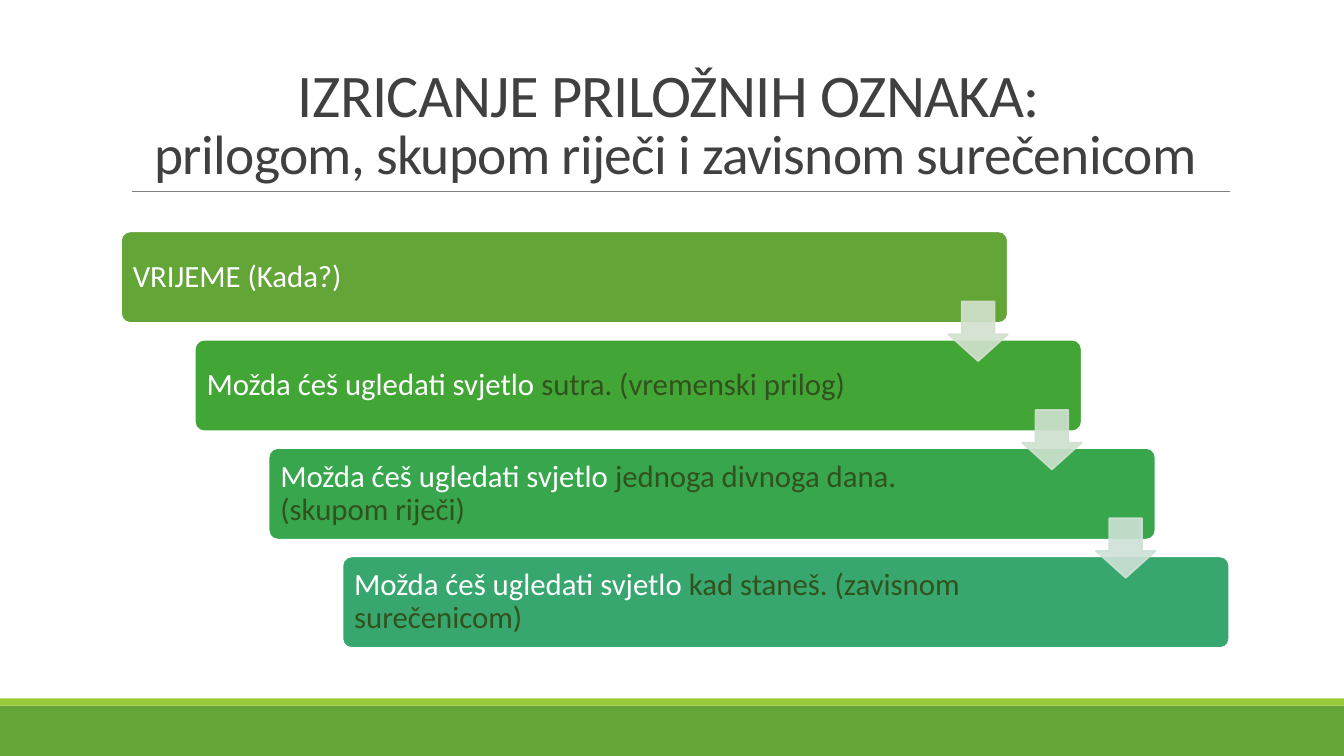
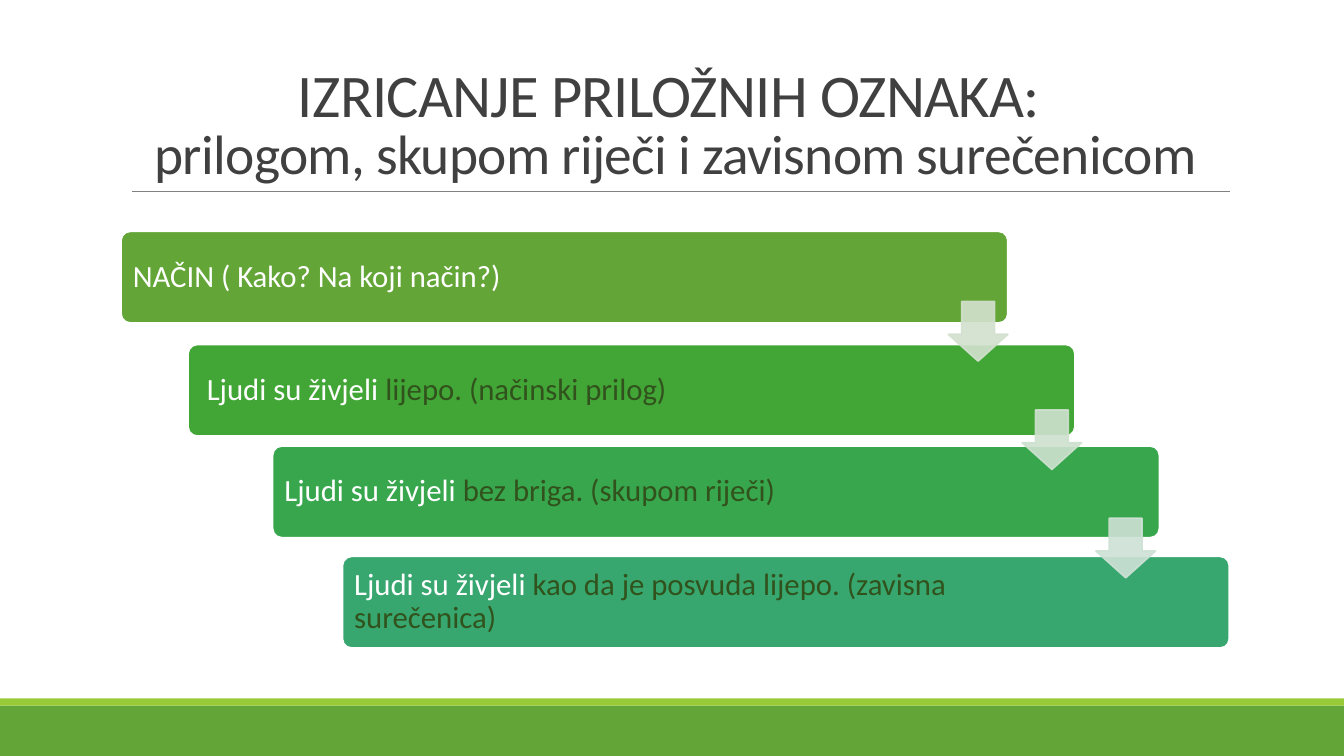
from lxml.etree import SubElement
from pptx import Presentation
from pptx.dml.color import RGBColor
from pptx.enum.shapes import MSO_CONNECTOR, MSO_SHAPE
from pptx.enum.text import MSO_ANCHOR as Anchor, PP_ALIGN as Align
from pptx.oxml.ns import qn
from pptx.util import Cm, Pt

WHITE = RGBColor(0xFF, 0xFF, 0xFF)
GREEN = RGBColor(0x63, 0xA5, 0x37)
LIME = RGBColor(0x99, 0xCB, 0x38)
RULE_GREY = RGBColor(0x80, 0x80, 0x80)
TITLE_GREY = RGBColor(0x40, 0x40, 0x40)
DARK_GREEN = RGBColor(0x31, 0x52, 0x1C)
STEP_COLOURS = [GREEN, RGBColor(0x42, 0xA6, 0x37),
                RGBColor(0x37, 0xA6, 0x4D), RGBColor(0x37, 0xA7, 0x6F)]
ARROW_COLOURS = [RGBColor(0xD3, 0xE1, 0xCE), RGBColor(0xCE, 0xE1, 0xCF),
                 RGBColor(0xCE, 0xE1, 0xD5)]

TITLE = [("IZRICANJE PRILOŽNIH OZNAKA: ", 43.2),
         ("prilogom, skupom riječi i zavisnom surečenicom", 39.6)]

# Each step: plain words, highlighted words, offset from the staircase (cm)
SLIDES = [
    [("VRIJEME (Kada?)", "", (0, 0)),
     ("Možda ćeš ugledati svjetlo ", "sutra. (vremenski prilog)", (0, 0)),
     ("Možda ćeš ugledati svjetlo ",
      "jednoga divnoga dana. (skupom riječi)", (0, 0)),
     ("Možda ćeš ugledati svjetlo ",
      "kad staneš. (zavisnom surečenicom)", (0, 0))],
    [("NAČIN ( Kako? Na koji način?)", "", (0, 0)),
     (" Ljudi su živjeli ", "lijepo. (načinski prilog)", (-0.17, 0.12)),
     ("Ljudi su živjeli ", "bez briga. (skupom riječi)", (0.1, -0.05)),
     ("Ljudi su živjeli ",
      "kao da je posvuda lijepo. (zavisna surečenica)", (0, 0))],
]

FONT = "Calibri"
SLIDE_W, SLIDE_H = 33.87, 19.05
BANDS = [(17.78, 1.27, GREEN), (17.6, 0.18, LIME)]
STEP_LEFT, STEP_TOP, STEP_W, STEP_H = 3.05, 5.83, 22.35, 2.31
SHIFT_X, SHIFT_Y = 1.86, 2.73
ARROW_LEFT, ARROW_TOP, ARROW_SIZE = 23.9, 7.6, 1.5

TITLE_FRAME = dict(word_wrap=True, vertical_anchor=Anchor.BOTTOM)
TITLE_PARAGRAPH = dict(alignment=Align.CENTER, line_spacing=0.85)
STEP_FRAME = dict(word_wrap=True, vertical_anchor=Anchor.MIDDLE,
                  margin_left=Cm(0.23), margin_right=Cm(3.58),
                  margin_top=Cm(0.23), margin_bottom=Cm(0.23))
STEP_PARAGRAPH = dict(alignment=Align.LEFT, line_spacing=0.9)


def set_all(target, values):
    for name, value in values.items():
        setattr(target, name, value)


def add_shape(slide, kind, left, top, width, height, fill, line=None):
    shape = slide.shapes.add_shape(kind, Cm(left), Cm(top), Cm(width), Cm(height))
    shape.shadow.inherit = False
    shape.fill.solid()
    shape.fill.fore_color.rgb = fill
    if line is None:
        shape.line.fill.background()
    else:
        shape.line.color.rgb = line
        shape.line.width = Pt(1.25)
    return shape


def add_run(paragraph, text, size, colour):
    run = paragraph.add_run()
    run.text = text
    set_all(run.font, dict(name=FONT, size=Pt(size)))
    run.font.color.rgb = colour
    return run


def add_frame(slide):
    """Add the bottom bands, the title and the rule under it."""
    for top, height, colour in BANDS:
        add_shape(slide, MSO_SHAPE.RECTANGLE, 0, top, SLIDE_W, height, colour)

    rule = slide.shapes.add_connector(
        MSO_CONNECTOR.STRAIGHT, Cm(3.32), Cm(4.82), Cm(31), Cm(4.82))
    rule.line.color.rgb = RULE_GREY
    rule.line.width = Pt(0.5)
    SubElement(rule.line._get_or_add_ln().getparent(), qn("a:effectLst"))

    title = slide.shapes.add_textbox(Cm(3.05), Cm(0.79), Cm(27.94), Cm(4.03))
    set_all(title.text_frame, TITLE_FRAME)
    paragraph = title.text_frame.paragraphs[0]
    set_all(paragraph, TITLE_PARAGRAPH)
    for number, (text, size) in enumerate(TITLE):
        if number:
            paragraph.add_line_break()
        run = add_run(paragraph, text, size, TITLE_GREY)
        run.font._element.set("spc", "-50")


def add_step(slide, number, plain, highlighted, offset):
    step = add_shape(slide, MSO_SHAPE.ROUNDED_RECTANGLE,
                     STEP_LEFT + number * SHIFT_X + offset[0],
                     STEP_TOP + number * SHIFT_Y + offset[1],
                     STEP_W, STEP_H, STEP_COLOURS[number], WHITE)
    step.adjustments[0] = 0.1
    set_all(step.text_frame, STEP_FRAME)
    paragraph = step.text_frame.paragraphs[0]
    set_all(paragraph, STEP_PARAGRAPH)
    add_run(paragraph, plain, 22, WHITE)
    if highlighted:
        add_run(paragraph, highlighted, 22, DARK_GREEN)


def add_arrow(slide, number, colour):
    arrow = add_shape(slide, MSO_SHAPE.DOWN_ARROW,
                      ARROW_LEFT + number * SHIFT_X,
                      ARROW_TOP + number * SHIFT_Y,
                      ARROW_SIZE, ARROW_SIZE, colour, colour)
    arrow.adjustments[0] = 0.55
    arrow.adjustments[1] = 0.45
    for tint in arrow._element.spPr.iter(qn("a:srgbClr")):
        SubElement(tint, qn("a:alpha"), val="90000")


def main():
    deck = Presentation()
    deck.slide_width, deck.slide_height = Cm(SLIDE_W), Cm(SLIDE_H)
    for steps in SLIDES:
        slide = deck.slides.add_slide(deck.slide_layouts[6])
        add_frame(slide)
        for number, step in enumerate(steps):
            add_step(slide, number, *step)
        for number, colour in enumerate(ARROW_COLOURS):
            add_arrow(slide, number, colour)
    deck.save("out.pptx")


if __name__ == "__main__":
    main()
